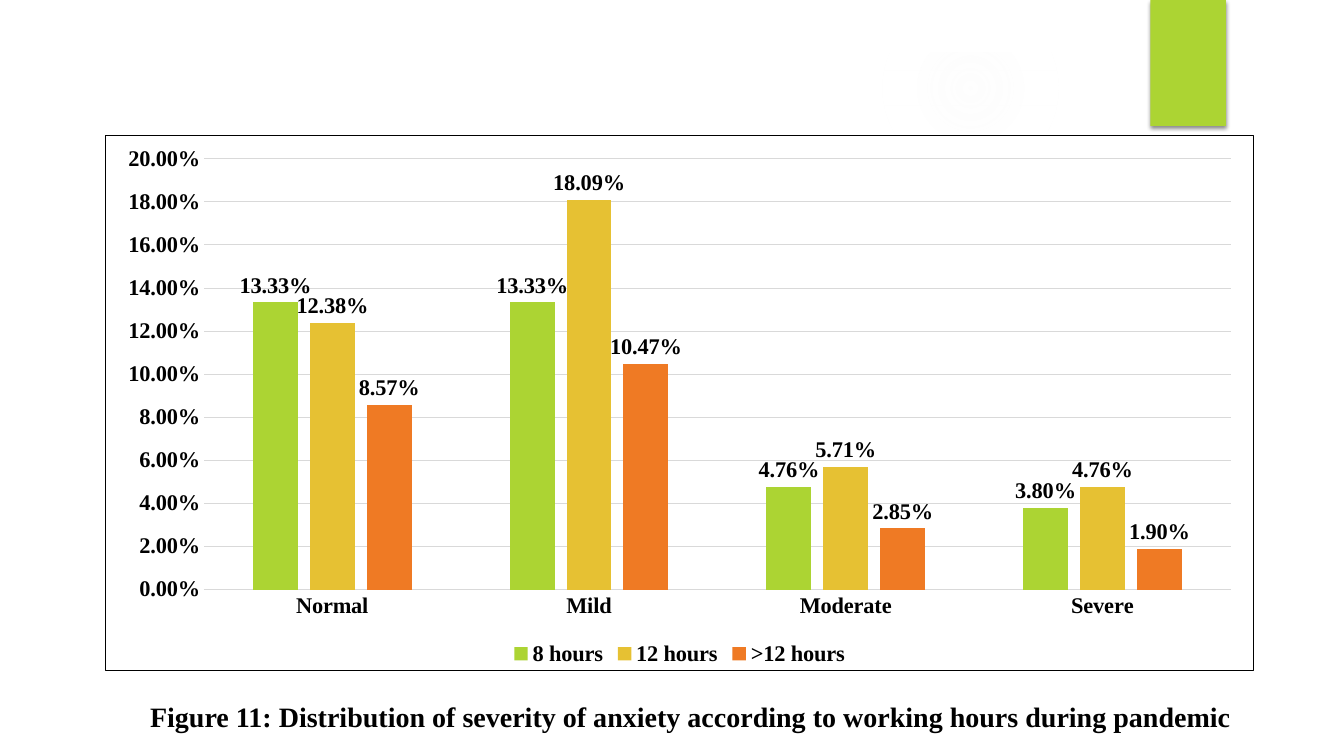
import pptx
import pptx.chart.data
import pptx.dml.color
import pptx.enum.chart
import pptx.enum.shapes
import pptx.oxml
import pptx.oxml.ns
import pptx.util

CAPTION = "Figure 11: Distribution of severity of anxiety according to working hours during pandemic"
SEVERITIES = ["Normal", "Mild", "Moderate", "Severe"]
HOURS = {
    "8 hours": [0.1333, 0.1333, 0.0476, 0.038],
    "12 hours": [0.1238, 0.1809, 0.0571, 0.0476],
    ">12 hours": [0.0857, 0.1047, 0.0285, 0.019],
}
PERCENT = "0.00%"

THEME = {
    "font": "Times New Roman",
    "ink": "000000",
    "paper": "FFFFFF",
    "glow": "F7F7F7",
    "grid": "D9D9D9",
    "accent": "ACD433",
    "series": ["ACD433", "E6C133", "EF7A24"],
    "chart_size": 16,
    "caption_size": 20,
    "line": 0.75,
}

SLIDE = (1333, 750)
TAB_BOX = (1141, 0, 75, 125)
CHART_BOX = (104, 134, 1140, 532)
CAPTION_BOX = (139, 672, 1096, 117)
PX = 9144

# left, top, diameter, inner alpha, middle alpha, fade end
GLOWS = [
    (0, 292, 458, 11, 10, 75),
    (0, 317, 258, 8, 8, 72),
    (941, 183, 308, 7, 6, 69),
    (875, 0, 175, 14, 7, 73),
    (941, 642, 108, 14, 7, 66),
]
BAND = [(934, 250), (1040, 246), (1177, 228), (1289, 214), (1283, 166), (1202, 191),
        (1109, 214), (1010, 232), (930, 243)]
PANEL = [(50, 204), (50, 700), (1284, 700), (1284, 204), (1200, 217), (1116, 227),
         (1004, 237), (867, 245), (708, 248), (535, 245), (401, 238), (283, 230),
         (159, 218)]
FRAME_OUTER = [(0, 0), (0, 750), (1333, 750), (1333, 0)]
FRAME_INNER = [(1281, 698), (52, 698), (52, 52), (1281, 52)]


def emu(box):
    return [pptx.util.Emu(n * PX) for n in box]


def rgb(name):
    return pptx.dml.color.RGBColor.from_string(name)


def set_font(font, size):
    font.name = THEME["font"]
    font.size = pptx.util.Pt(size)
    font.bold = True
    font.color.rgb = rgb(THEME["ink"])


def set_fill(fill, color):
    fill.solid()
    fill.fore_color.rgb = rgb(color)


def set_line(line, color):
    line.color.rgb = rgb(color)
    line.width = pptx.util.Pt(THEME["line"])


def make_plain(sp, color):
    set_fill(sp.fill, color)
    sp.line.fill.background()
    sp.shadow.inherit = False


def add_glow(slide, left, top, size, inner, middle, end):
    sp = slide.shapes.add_shape(
        pptx.enum.shapes.MSO_SHAPE.OVAL, *emu((left, top, size, size)))
    make_plain(sp, THEME["glow"])
    stops = "".join(
        f'<a:gs pos="{pos * 1000}"><a:srgbClr val="{THEME["glow"]}">'
        f'<a:alpha val="{alpha * 1000}"/></a:srgbClr></a:gs>'
        for pos, alpha in ((0, inner), (36, middle), (end, 0)))
    solid = sp.element.spPr.find(pptx.oxml.ns.qn("a:solidFill"))
    solid.getparent().replace(solid, pptx.oxml.parse_xml(
        f'<a:gradFill {pptx.oxml.ns.nsdecls("a")}><a:gsLst>{stops}</a:gsLst>'
        '<a:path path="circle"><a:fillToRect l="50000" t="50000" r="50000" b="50000"/>'
        '</a:path></a:gradFill>'))


def add_outline(slide, *contours):
    first, *others = contours
    builder = slide.shapes.build_freeform(*first[0], scale=PX)
    builder.add_line_segments(first[1:], close=True)
    for points in others:
        builder.move_to(*points[0])
        builder.add_line_segments(points[1:], close=True)
    sp = builder.convert_to_shape()
    make_plain(sp, THEME["paper"])
    return sp


def add_backdrop(slide):
    for glow in GLOWS:
        add_glow(slide, *glow)
    band = add_outline(slide, BAND)
    band.rotation = 350.2
    color = band.element.spPr.find(".//" + pptx.oxml.ns.qn("a:srgbClr"))
    color.append(pptx.oxml.parse_xml(
        f'<a:alpha {pptx.oxml.ns.nsdecls("a")} val="20000"/>'))
    add_outline(slide, PANEL)
    add_outline(slide, FRAME_OUTER, FRAME_INNER)


def add_tab(slide):
    sp = slide.shapes.add_shape(pptx.enum.shapes.MSO_SHAPE.RECTANGLE, *emu(TAB_BOX))
    make_plain(sp, THEME["accent"])
    effects = sp.element.spPr.find(pptx.oxml.ns.qn("a:effectLst"))
    effects.append(pptx.oxml.parse_xml(
        f'<a:outerShdw {pptx.oxml.ns.nsdecls("a")} blurRad="38100" dist="25400" dir="5400000">'
        f'<a:srgbClr val="{THEME["ink"]}"><a:alpha val="45000"/></a:srgbClr></a:outerShdw>'))


def add_hours_chart(slide):
    data = pptx.chart.data.CategoryChartData(number_format=PERCENT)
    data.categories = SEVERITIES
    for name, values in HOURS.items():
        data.add_series(name, values)
    enums = pptx.enum.chart
    chart = slide.shapes.add_chart(
        enums.XL_CHART_TYPE.COLUMN_CLUSTERED, *emu(CHART_BOX), data).chart
    size = THEME["chart_size"]
    set_font(chart.font, size)
    chart.has_title = False
    chart.has_legend = True
    chart.legend.position = enums.XL_LEGEND_POSITION.BOTTOM
    chart.legend.include_in_layout = False
    set_font(chart.legend.font, size)

    for axis in (chart.category_axis, chart.value_axis):
        axis.major_tick_mark = enums.XL_TICK_MARK.NONE
        axis.minor_tick_mark = enums.XL_TICK_MARK.NONE
        set_font(axis.tick_labels.font, size)
    set_line(chart.category_axis.format.line, THEME["grid"])
    values = chart.value_axis
    values.minimum_scale, values.maximum_scale, values.major_unit = 0, 0.2, 0.02
    values.format.line.fill.background()
    values.has_major_gridlines = True
    set_line(values.major_gridlines.format.line, THEME["grid"])
    values.tick_labels.number_format = PERCENT
    values.tick_labels.number_format_is_linked = False

    plot = chart.plots[0]
    plot.gap_width, plot.overlap = 219, -27
    plot.vary_by_categories = False
    for series, color in zip(plot.series, THEME["series"]):
        set_fill(series.format.fill, color)
        series.invert_if_negative = False
        labels = series.data_labels
        labels.show_value = True
        labels.position = enums.XL_LABEL_POSITION.OUTSIDE_END
        labels.number_format = PERCENT
        labels.number_format_is_linked = False
        set_font(labels.font, size)

    frame = pptx.oxml.parse_xml(
        f'<c:spPr {pptx.oxml.ns.nsdecls("c", "a")}>'
        f'<a:solidFill><a:srgbClr val="{THEME["paper"]}"/></a:solidFill>'
        f'<a:ln w="{pptx.util.Pt(THEME["line"])}"><a:solidFill>'
        f'<a:srgbClr val="{THEME["ink"]}"/></a:solidFill></a:ln></c:spPr>')
    chart.element.find(pptx.oxml.ns.qn("c:chart")).addnext(frame)


def add_caption(slide):
    tf = slide.shapes.add_textbox(*emu(CAPTION_BOX)).text_frame
    tf.word_wrap = True
    p = tf.paragraphs[0]
    p.text = CAPTION
    p.line_spacing = 1.5
    p.space_after = pptx.util.Pt(8)
    set_font(p.font, THEME["caption_size"])


def main():
    prs = pptx.Presentation()
    prs.slide_width, prs.slide_height = emu(SLIDE)
    slide = prs.slides.add_slide(prs.slide_layouts[6])
    set_fill(slide.background.fill, THEME["paper"])
    add_backdrop(slide)
    add_tab(slide)
    add_hours_chart(slide)
    add_caption(slide)
    prs.save("out.pptx")


if __name__ == "__main__":
    main()
